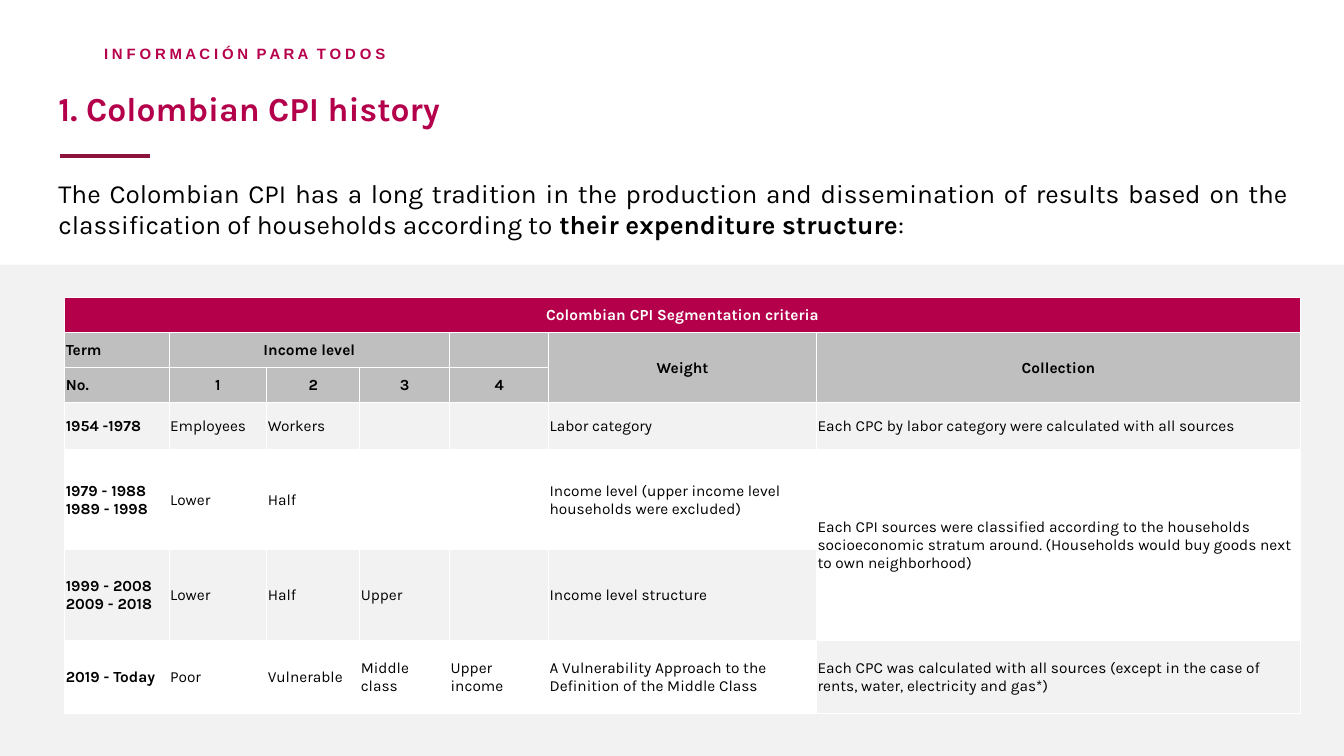
import pptx
import pptx.dml.color
import pptx.enum.shapes
import pptx.enum.text
import pptx.oxml
import pptx.oxml.ns
import pptx.util

Pt = pptx.util.Pt
ALIGN = pptx.enum.text.PP_ALIGN
COLORS = {
    "slogan": "B6004C", "crimson": "B4004A", "rule": "8D143D", "band": "F2F2F2",
    "header": "BFBFBF", "white": "FFFFFF", "black": "000000",
}
COLUMN_WIDTHS = [74.5, 69.8, 66.5, 64.2, 70.7, 191.4, 345.6]
ROW_HEIGHTS = [25, 25, 25, 33.2, 71.8, 64.7, 52.2]
HEADER_ROWS = 3
CRITERIA = [
    ["Colombian CPI Segmentation criteria", "", "", "", "", "", ""],
    ["Term", "Income level", "", "", "", "Weight", "Collection"],
    ["No.", "1", "2", "3", "4", "", ""],
    ["1954 -1978", "Employees", "Workers", "", "", "Labor category",
     "Each CPC by labor category were calculated with all sources"],
    ["1979 - 1988\n1989 - 1998", "Lower", "Half", "", "",
     "Income level (upper income level households were excluded)",
     "Each CPI sources were classified according to the households socioeconomic stratum "
     "around. (Households would buy goods next to own neighborhood)"],
    ["1999 - 2008\n2009 - 2018", "Lower", "Half", "Upper", "", "Income level structure", ""],
    ["2019 - Today", "Poor", "Vulnerable", "Middle class", "Upper income",
     "A Vulnerability Approach to the Definition of the Middle Class",
     "Each CPC was calculated with all sources (except in the case of rents, water, "
     "electricity and gas*)"],
]
MERGES = [((0, 0), (0, 6)), ((1, 1), (1, 3)), ((1, 5), (2, 5)), ((1, 6), (2, 6)), ((4, 6), (5, 6))]


def rgb(name):
    """Return the named colour."""
    return pptx.dml.color.RGBColor.from_string(COLORS[name])


def add_run(paragraph, text, size, color, bold=False, font="Karla"):
    """Add one formatted run and return it."""
    run = paragraph.add_run()
    run.text = text
    run.font.name = font
    run.font.size = Pt(size)
    run.font.bold = bold
    run.font.color.rgb = rgb(color)
    return run


def add_text_frame(slide, left, top, width, height):
    """Add a wrapping text box and return its frame."""
    frame = slide.shapes.add_textbox(Pt(left), Pt(top), Pt(width), Pt(height)).text_frame
    frame.word_wrap = True
    return frame


def add_slogan(slide, left, top, width, height):
    """Place the letter-spaced slogan."""
    frame = add_text_frame(slide, left, top, width, height)
    frame.margin_left = frame.margin_right = frame.margin_bottom = 0
    frame.margin_top = Pt(1.4)
    slogan = frame.paragraphs[0]
    slogan.line_spacing = 1.3
    for index, word in enumerate(["INFORMACIÓN", "PARA", "TODOS"]):
        if index:
            gap = add_run(slogan, " ", 10.7, "slogan", True, "Arial")
            gap._r.get_or_add_rPr().set("spc", "290")
        letters = add_run(slogan, " ".join(word), 10.7, "slogan", True, "Arial")
        letters._r.get_or_add_rPr().set("spc", "-10")


def add_heading(slide, left, top, width, height):
    """Place the title and the short rule below it."""
    title = add_text_frame(slide, left, top, width, height)
    add_run(title.paragraphs[0], "1. Colombian CPI history", 24, "crimson", True)
    rule_left, rule_y = left + 8, top + 52.6
    rule = slide.shapes.add_connector(
        pptx.enum.shapes.MSO_CONNECTOR.STRAIGHT,
        Pt(rule_left), Pt(rule_y), Pt(rule_left + 64.5), Pt(rule_y))
    rule.line.color.rgb = rgb("rule")
    rule.line.width = Pt(3)
    rule._element.spPr.append(pptx.oxml.parse_xml(
        f'<a:effectLst {pptx.oxml.ns.nsdecls("a")}/>'))


def add_introduction(slide, left, top, width, height):
    """Place the justified introduction."""
    introduction = add_text_frame(slide, left, top, width, height).paragraphs[0]
    introduction.alignment = ALIGN.JUSTIFY
    add_run(introduction, "The Colombian CPI has a long tradition in the production and "
            "dissemination of results based on the classification of households "
            "according to ", 18.7, "black")
    add_run(introduction, "their expenditure structure", 18.7, "black", True)
    add_run(introduction, ":", 18.7, "black")


def add_band(slide, left, top, width, height):
    """Place the grey band behind the table."""
    band = slide.shapes.add_shape(
        pptx.enum.shapes.MSO_SHAPE.RECTANGLE, Pt(left), Pt(top), Pt(width), Pt(height))
    band.shadow.inherit = False
    band.fill.solid()
    band.fill.fore_color.rgb = rgb("band")
    band.line.fill.background()


def cell_fill(row, column):
    """Return the fill name of a cell, or None where the band shows through."""
    if row == 0:
        return "crimson"
    if row < HEADER_ROWS:
        return "header"
    if (row, column) == (6, 6):
        return "band"
    return "white" if row % 2 == 0 else None


def format_cell(cell, row, column):
    """Fill, border and write one cell of the criteria table."""
    cell.margin_left = cell.margin_right = cell.margin_top = Pt(0.7)
    cell.margin_bottom = 0
    cell.vertical_anchor = pptx.enum.text.MSO_ANCHOR.MIDDLE
    properties = cell._tc.get_or_add_tcPr()
    for side in ("lnL", "lnR", "lnT", "lnB"):
        properties.append(pptx.oxml.parse_xml(
            f'<a:{side} {pptx.oxml.ns.nsdecls("a")} w="{Pt(0.75)}"><a:solidFill>'
            f'<a:srgbClr val="{COLORS["white"]}"/></a:solidFill></a:{side}>'))
    fill = cell_fill(row, column)
    if fill:
        cell.fill.solid()
        cell.fill.fore_color.rgb = rgb(fill)
    else:
        cell.fill.background()
    text = CRITERIA[row][column]
    if not text:
        return
    paragraph = cell.text_frame.paragraphs[0]
    centred = row == 0 or (row < HEADER_ROWS and column > 0)
    paragraph.alignment = ALIGN.CENTER if centred else ALIGN.LEFT
    for index, line in enumerate(text.split("\n")):
        if index:
            paragraph.add_line_break()
        add_run(paragraph, line, 11, "black" if row else "white",
                row < HEADER_ROWS or column == 0)


def add_criteria_table(slide, left, top):
    """Place the segmentation criteria table."""
    table = slide.shapes.add_table(
        len(ROW_HEIGHTS), len(COLUMN_WIDTHS), Pt(left), Pt(top),
        Pt(sum(COLUMN_WIDTHS)), Pt(sum(ROW_HEIGHTS))).table
    table.horz_banding = False
    table.first_row = False
    for column, width in zip(table.columns, COLUMN_WIDTHS):
        column.width = Pt(width)
    for row, height in zip(table.rows, ROW_HEIGHTS):
        row.height = Pt(height)
    for first, last in MERGES:
        table.cell(*first).merge(table.cell(*last))
    for row in range(len(ROW_HEIGHTS)):
        for column in range(len(COLUMN_WIDTHS)):
            format_cell(table.cell(row, column), row, column)


def main():
    """Build the slide and save it."""
    presentation = pptx.Presentation()
    presentation.slide_width = Pt(960)
    presentation.slide_height = Pt(540)
    slide = presentation.slides.add_slide(presentation.slide_layouts[6])
    add_slogan(slide, 74.3, 26.6, 295, 16.6)
    add_band(slide, 0, 189, 960, 351)
    add_heading(slide, 34.6, 59, 625, 36)
    add_introduction(slide, 34.6, 123, 893, 54)
    add_criteria_table(slide, 46.3, 212.7)
    presentation.save("out.pptx")


if __name__ == "__main__":
    main()
